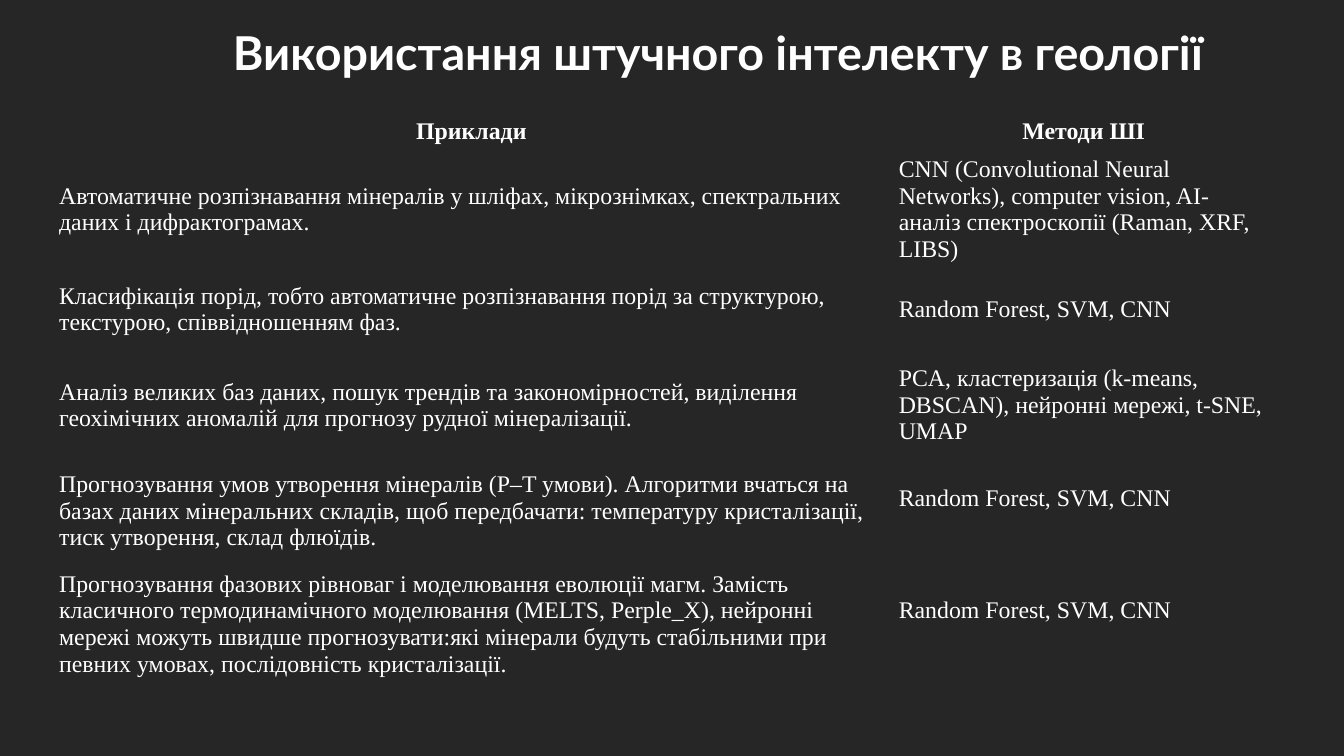
import pptx
import pptx.dml.color
import pptx.enum.text
import pptx.oxml
import pptx.oxml.ns
import pptx.util
from pptx.util import Cm, Pt

TITLE = "Використання штучного інтелекту в геології"
HEADINGS = ("Приклади", "Методи ШІ")
FOREST = "Random Forest, SVM, CNN"
EXAMPLES = [
    ("Автоматичне розпізнавання мінералів у шліфах, мікрознімках, спектральних "
     "даних і дифрактограмах.",
     "CNN (Convolutional Neural Networks), computer vision, AI-аналіз "
     "спектроскопії (Raman, XRF, LIBS)"),
    ("Класифікація порід, тобто автоматичне розпізнавання порід за структурою, "
     "текстурою, співвідношенням фаз.",
     FOREST),
    ("Аналіз великих баз даних, пошук трендів та закономірностей, виділення "
     "геохімічних аномалій для прогнозу рудної мінералізації.",
     "PCA, кластеризація (k-means, DBSCAN), нейронні мережі, t-SNE, UMAP"),
    ("Прогнозування умов утворення мінералів (P–T умови). Алгоритми вчаться на "
     "базах даних мінеральних складів, щоб передбачати: температуру "
     "кристалізації, тиск утворення, склад флюїдів.",
     FOREST),
    ("Прогнозування фазових рівноваг і моделювання еволюції магм. Замість "
     "класичного термодинамічного моделювання (MELTS, Perple_X), нейронні "
     "мережі можуть швидше прогнозувати:які мінерали будуть стабільними при "
     "певних умовах, послідовність кристалізації.",
     FOREST),
]
COLUMN_WIDTHS = (21.16, 9.7)
ROW_HEIGHTS = (1.07, 2.31, 2.16, 2.67, 2.67, 3.02)
RAISED_CELLS = {(4, 1), (5, 1)}  # text sits half a line above the middle
LINE_HEIGHT = 0.67
BACKGROUND, WHITE = "262626", "FFFFFF"


def color(value):
    return pptx.dml.color.RGBColor.from_string(value)


def style(para, name, size, bold, centered):
    para.font.name = name
    para.font.size = Pt(size)
    para.font.bold = bold
    para.font.color.rgb = color(WHITE)
    align = pptx.enum.text.PP_ALIGN
    para.alignment = align.CENTER if centered else align.LEFT


def clear_cell(cell):
    """Remove the fill and the four borders."""
    cell.fill.background()
    properties = cell._tc.get_or_add_tcPr()
    for index, side in enumerate(("lnL", "lnR", "lnT", "lnB")):
        border = pptx.oxml.parse_xml(
            f'<a:{side} {pptx.oxml.ns.nsdecls("a")} w="0"><a:noFill/></a:{side}>')
        properties.insert(index, border)


def add_title(page):
    title = page.shapes.title
    title.left, title.top = Cm(2.87), Cm(-0.2)
    title.width, title.height = Cm(30.48), Cm(3.18)
    frame = title.text_frame
    frame.text = TITLE
    frame.word_wrap = True
    frame.auto_size = pptx.enum.text.MSO_AUTO_SIZE.NONE
    frame.vertical_anchor = pptx.enum.text.MSO_ANCHOR.MIDDLE
    frame.margin_left = frame.margin_right = 0
    frame.margin_top = frame.margin_bottom = 0
    para = frame.paragraphs[0]
    para.line_spacing = 0.9
    style(para, "Lato", 33.3, True, True)


def add_examples(page):
    rows = [HEADINGS, *EXAMPLES]
    table = page.shapes.add_table(
        len(rows), len(HEADINGS), Cm(1.3), Cm(2.77),
        Cm(sum(COLUMN_WIDTHS)), Cm(sum(ROW_HEIGHTS))).table
    table.first_row = table.horz_banding = False
    for column, width in zip(table.columns, COLUMN_WIDTHS):
        column.width = Cm(width)
    for row, height in zip(table.rows, ROW_HEIGHTS):
        row.height = Cm(height)

    for row_index, texts in enumerate(rows):
        for column_index, text in enumerate(texts):
            cell = table.cell(row_index, column_index)
            raised = (row_index, column_index) in RAISED_CELLS
            cell.text = text
            cell.vertical_anchor = pptx.enum.text.MSO_ANCHOR.MIDDLE
            cell.margin_left = cell.margin_right = Cm(0.19)
            cell.margin_top = Cm(0.1)
            cell.margin_bottom = Cm(0.1 + LINE_HEIGHT * raised)
            clear_cell(cell)
            heading = row_index == 0
            style(cell.text_frame.paragraphs[0], "Times New Roman", 17,
                  heading, heading)


def main():
    deck = pptx.Presentation()
    deck.slide_width, deck.slide_height = Cm(33.87), Cm(19.05)
    page = deck.slides.add_slide(deck.slide_layouts[5])
    page.background.fill.solid()
    page.background.fill.fore_color.rgb = color(BACKGROUND)
    add_title(page)
    add_examples(page)
    deck.save("out.pptx")


if __name__ == "__main__":
    main()
